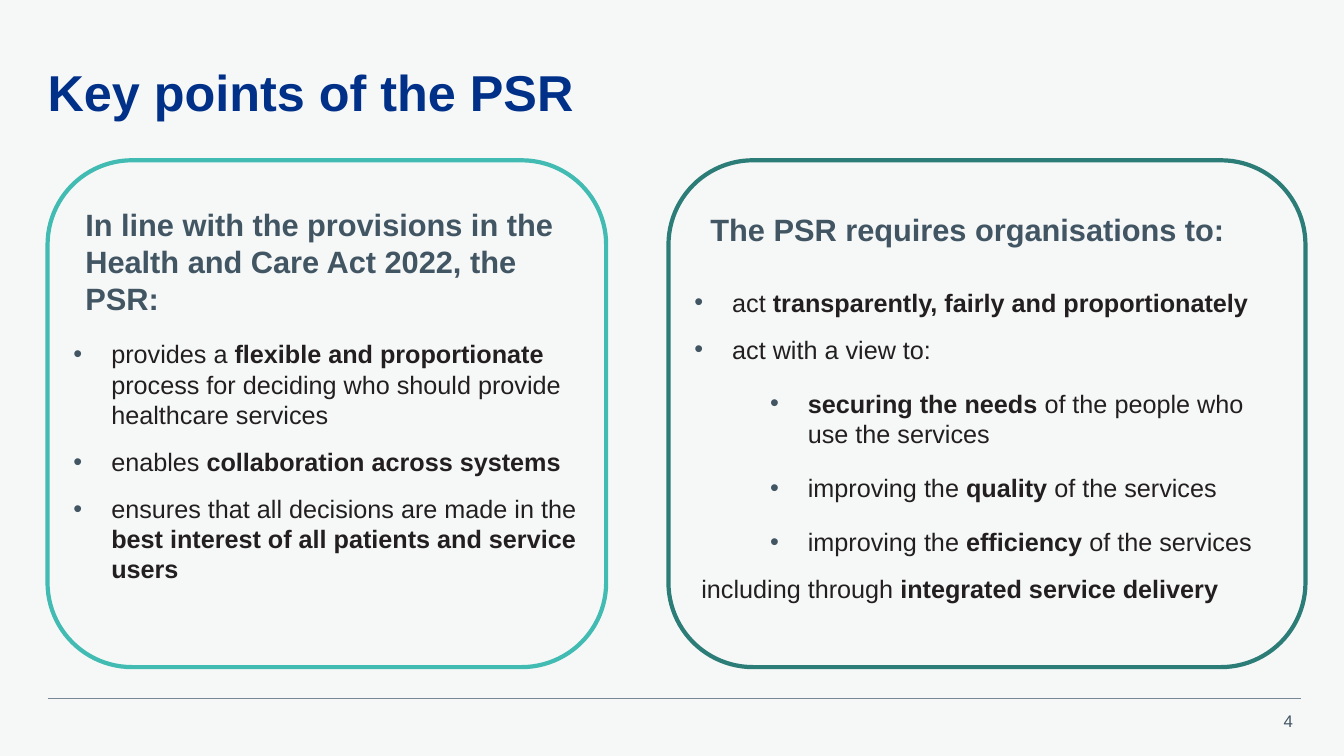
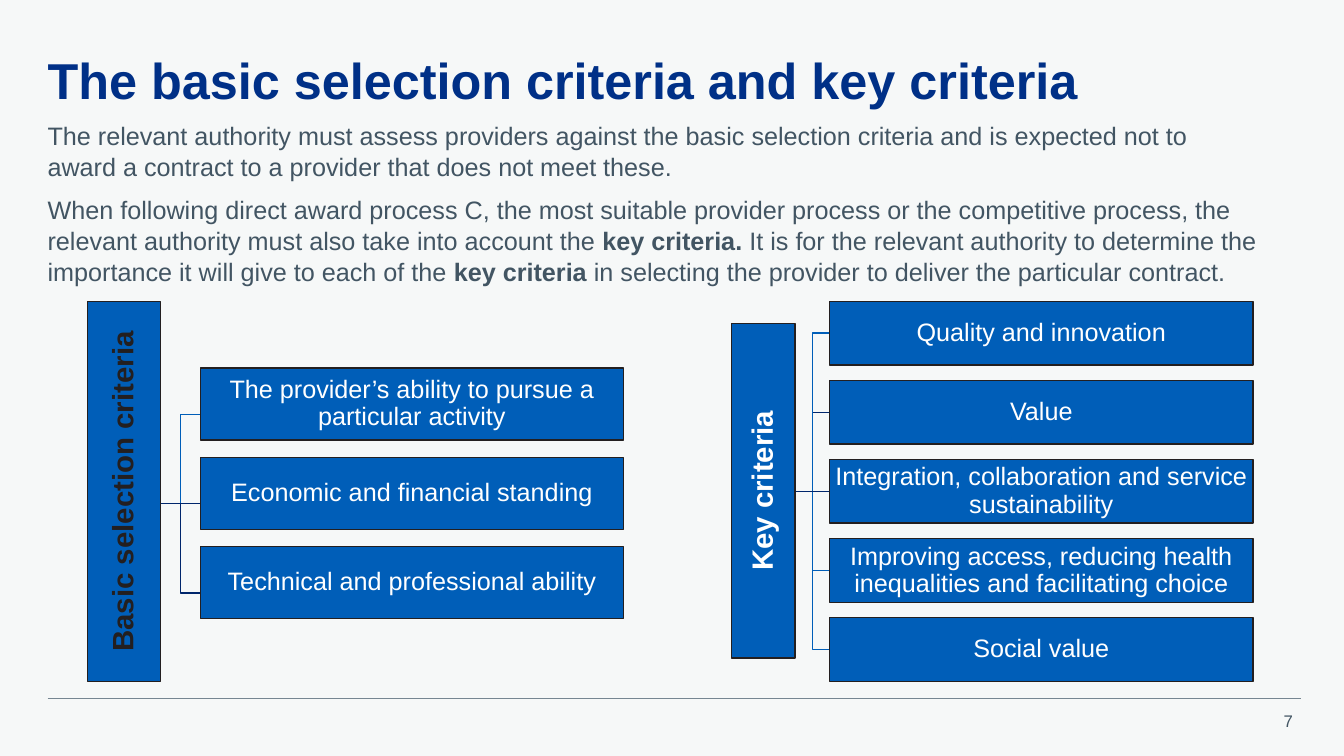
"""Build two slides on the provider selection regime: key points and criteria."""
from dataclasses import dataclass

from lxml import etree
from pptx import Presentation
from pptx.dml.color import RGBColor
from pptx.enum.shapes import MSO_CONNECTOR as Link, MSO_SHAPE as Shape
from pptx.enum.text import MSO_ANCHOR as Anchor, PP_ALIGN as Align
from pptx.oxml.ns import qn
from pptx.util import Pt


@dataclass(frozen=True)
class Theme:
    font: str = "Arial"
    ground: str = "F6F8F8"
    title: str = "003087"
    slate: str = "425563"
    ink: str = "231F20"
    rule: str = "768692"
    blue: str = "005EB8"
    navy: str = "00266C"
    teal: str = "42BBB2"
    pine: str = "2C7D77"
    white: str = "FFFFFF"
    title_size: int = 36
    heading_size: int = 22
    label_size: int = 21
    body_size: int = 18
    number_size: int = 12


THEME = Theme()
LEFT = 34
HANG = 27
INDENTS = {"bullet": 27, "sub": 81, "plain": 5}

PANELS = [
    {
        "frame": (LEFT, 114.5, 399, 362), "color": THEME.teal,
        "heading": "In line with the provisions in the Health and Care Act 2022, the PSR:",
        "heading_at": (61, 147, 343.5, 75), "leading": None,
        "list_at": (52.5, 242, 362, 204.5),
        "points": [
            ("bullet", "provides a **flexible and proportionate **process for deciding "
                       "who should provide healthcare services"),
            ("bullet", "enables **collaboration across systems**"),
            ("bullet", "ensures that all decisions are made in the "
                       "**best interest of all patients and service users**"),
        ],
    },
    {
        "frame": (477.5, 114.5, 455, 362), "color": THEME.pine,
        "heading": "The PSR requires organisations to:",
        "heading_at": (507.5, 155, 380, 30), "leading": Pt(22),
        "list_at": (496, 205, 402.5, 242),
        "points": [
            ("bullet", "act **transparently, fairly and proportionately**"),
            ("bullet", "act with a view to:"),
            ("sub", "**securing the needs **of the people who use the services"),
            ("sub", "improving the **quality **of the services"),
            ("sub", "improving the** efficiency **of the services"),
            ("plain", "including through **integrated service delivery**"),
        ],
    },
]

INTRO = [
    "The relevant authority must assess providers against the basic selection criteria "
    "and is expected not to award a contract to a provider that does not meet these.",
    "When following direct award process C, the most suitable provider process or the "
    "competitive process, the relevant authority must also take into account the "
    "**key criteria. **It is for the relevant authority to determine the importance it "
    "will give to each of the **key criteria** in selecting the provider to deliver the "
    "particular contract.",
]

TREES = [
    {
        "label": "Basic selection criteria", "label_color": THEME.ink,
        "label_at": (62.5, 215.3, 52, 271.4),
        "first": (143.2, 262.8), "size": (302, 51.6), "pitch": 63.8, "drop": 7.3,
        "items": [
            ("The provider’s ability to pursue a particular activity", THEME.blue),
            ("Economic and financial standing", THEME.navy),
            ("Technical and professional ability", THEME.navy),
        ],
    },
    {
        "label": "Key criteria", "label_color": THEME.white,
        "label_at": (522.6, 231.1, 45.4, 239),
        "first": (592.6, 215.3), "size": (302.4, 45.4), "pitch": 56.5, "drop": 0,
        "items": [
            ("Quality and innovation", THEME.blue),
            ("Value", THEME.navy),
            ("Integration, collaboration and service sustainability", THEME.navy),
            ("Improving access, reducing health inequalities and facilitating choice",
             THEME.blue),
            ("Social value", THEME.blue),
        ],
    },
]


def rgb(color):
    return RGBColor.from_string(color)


def place(frame):
    return [Pt(length) for length in frame]


def write(para, text, size, color, bold=None, align=Align.LEFT, leading=None, after=0):
    for index, piece in enumerate(text.split("**")):
        if piece:
            span = para.add_run()
            span.text = piece
            if index % 2:
                span.font.bold = True
    para.alignment = align
    para.line_spacing = leading
    para.space_after = Pt(after)
    font = para.font
    font.name, font.size, font.bold = THEME.font, Pt(size), bold
    font.color.rgb = rgb(color)


def set_indent(para, kind):
    props = para._p.get_or_add_pPr()
    props.set("marL", str(Pt(INDENTS[kind])))
    if kind == "plain":
        return
    props.set("indent", str(-Pt(HANG)))
    tint = etree.SubElement(props, qn("a:buClr"))
    etree.SubElement(tint, qn("a:srgbClr"), val=THEME.slate)
    etree.SubElement(props, qn("a:buFont"), typeface=THEME.font)
    etree.SubElement(props, qn("a:buChar"), char="•")
    if kind == "sub":
        para.level = 1
        para.space_before = Pt(5)


def prepare(frame, inset=0, anchor=Anchor.TOP):
    frame.word_wrap = True
    frame.vertical_anchor = anchor
    frame.margin_left = frame.margin_right = Pt(inset)
    frame.margin_top = frame.margin_bottom = Pt(inset)


def add_text(page, frame, lines, size, color, anchor=Anchor.TOP, **style):
    box = page.shapes.add_textbox(*place(frame)).text_frame
    prepare(box, anchor=anchor)
    for index, (kind, text) in enumerate(lines):
        para = box.add_paragraph() if index else box.paragraphs[0]
        if kind:
            set_indent(para, kind)
        write(para, text, size, color, **style)


def add_link(page, start, end, color, width):
    kind = Link.STRAIGHT if start[1] == end[1] else Link.ELBOW
    link = page.shapes.add_connector(kind, *place(start + end))
    link.line.color.rgb = rgb(color)
    link.line.width = Pt(width)
    etree.SubElement(link._element.spPr, qn("a:effectLst"))


def add_page(deck, title, title_top, number):
    page = deck.slides.add_slide(deck.slide_layouts[6])
    add_link(page, (LEFT, 499), (929.5, 499), THEME.rule, 0.5)
    add_text(page, (894, 507.6, 29.6, 18), [(None, number)], THEME.number_size,
             THEME.slate, align=Align.RIGHT)
    add_text(page, (LEFT, title_top, 898, 68.4), [(None, title)], THEME.title_size,
             THEME.title, anchor=Anchor.MIDDLE, bold=True, leading=0.9)
    return page


def add_panel(page, panel):
    add_text(page, panel["heading_at"], [(None, panel["heading"])], THEME.heading_size,
             THEME.slate, bold=True, leading=panel["leading"], after=9)
    add_text(page, panel["list_at"], panel["points"], THEME.body_size, THEME.ink, after=12)
    outline = page.shapes.add_shape(Shape.ROUNDED_RECTANGLE, *place(panel["frame"]))
    outline.shadow.inherit = False
    outline.fill.background()
    outline.line.color.rgb = rgb(panel["color"])
    outline.line.width = Pt(3)


def add_block(page, frame, text, size, color, bold=None):
    block = page.shapes.add_shape(Shape.RECTANGLE, *place(frame))
    block.shadow.inherit = False
    block.fill.solid()
    block.fill.fore_color.rgb = rgb(THEME.blue)
    block.line.color.rgb = rgb(THEME.ink)
    block.line.width = Pt(1)
    prepare(block.text_frame, 0.7, Anchor.MIDDLE)
    write(block.text_frame.paragraphs[0], text, size, color, bold, Align.CENTER, 0.9)
    return block


def add_tree(page, tree):
    left, top, width, height = tree["label_at"]
    item_left, first_top = tree["first"]
    item_width, item_height = tree["size"]
    items, pitch = tree["items"], tree["pitch"]
    middle = len(items) // 2
    tops = [first_top + index * pitch for index in range(len(items))]
    joints = [item_top + item_height / 2 + tree["drop"] for item_top in tops]

    for index in sorted(range(len(items)), key=lambda i: (i == middle, -i)):
        add_link(page, (left + width, joints[middle]), (item_left, joints[index]),
                 items[index][1], 1)
    turned = (left + (width - height) / 2, top + (height - width) / 2, height, width)
    label = add_block(page, turned, tree["label"], THEME.label_size,
                      tree["label_color"], True)
    label.rotation = 270
    for item_top, (text, _) in zip(tops, items):
        add_block(page, (item_left, item_top, item_width, item_height), text,
                  THEME.body_size, THEME.white)


def main():
    deck = Presentation()
    deck.slide_width, deck.slide_height = Pt(960), Pt(540)
    ground = deck.slide_master.background.fill
    ground.solid()
    ground.fore_color.rgb = rgb(THEME.ground)

    page = add_page(deck, "Key points of the PSR", 34, "4")
    for panel in PANELS:
        add_panel(page, panel)

    page = add_page(deck, "The basic selection criteria and key criteria", 25, "7")
    add_text(page, (LEFT, 85.7, 867, 118), [(None, text) for text in INTRO],
             THEME.body_size, THEME.slate, leading=Pt(22), after=9)
    for tree in TREES:
        add_tree(page, tree)
    deck.save("out.pptx")


if __name__ == "__main__":
    main()
